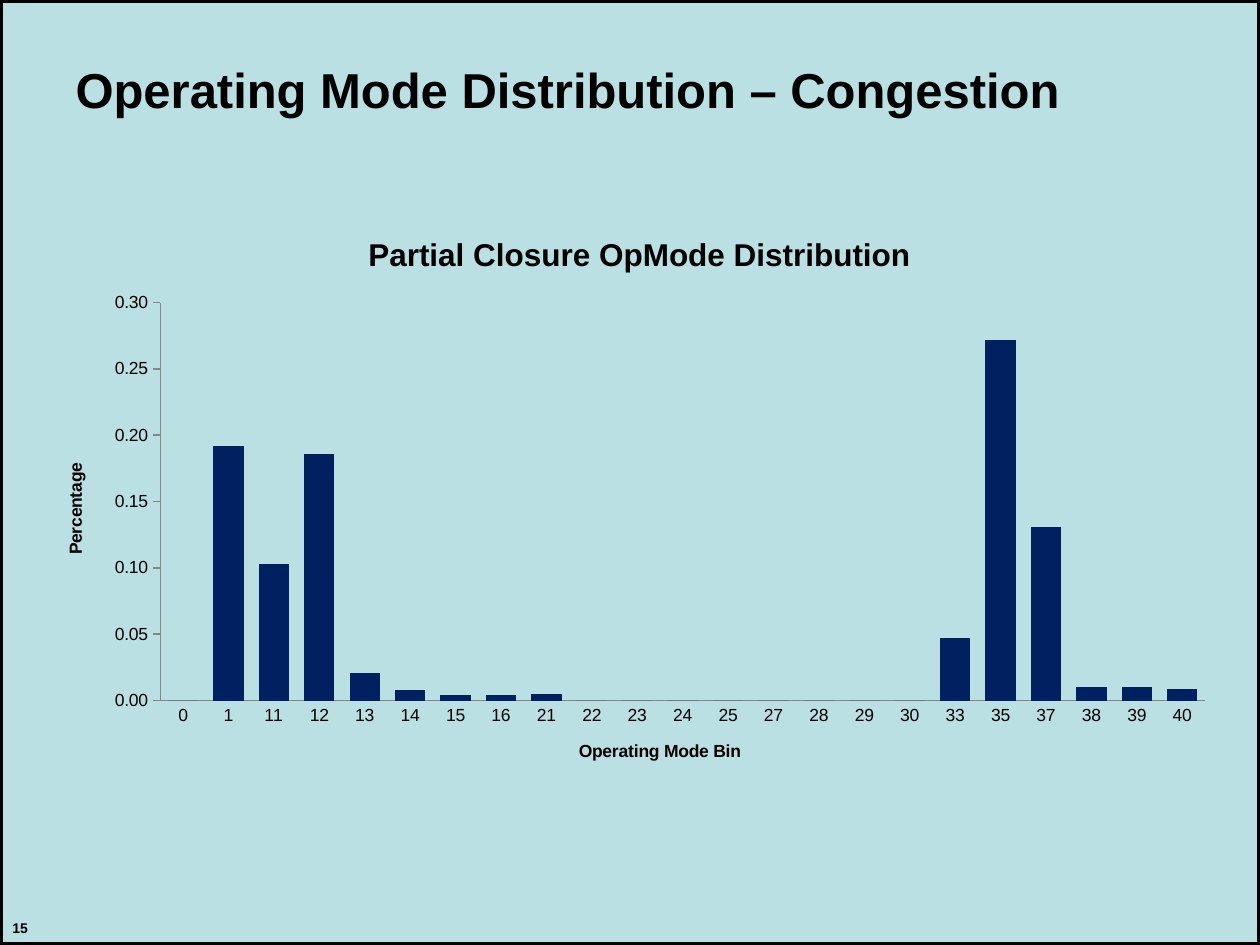
from lxml import etree
from pptx import Presentation
from pptx.chart.data import CategoryChartData
from pptx.dml.color import RGBColor
from pptx.enum.chart import XL_CHART_TYPE, XL_TICK_MARK
from pptx.enum.shapes import MSO_SHAPE
from pptx.enum.text import MSO_ANCHOR, PP_ALIGN
from pptx.oxml.ns import qn
from pptx.util import Cm, Pt

COLUMNS = XL_CHART_TYPE.COLUMN_CLUSTERED
TICK_NONE, TICK_OUT = XL_TICK_MARK.NONE, XL_TICK_MARK.OUTSIDE
RECTANGLE = MSO_SHAPE.RECTANGLE
TOP, LEFT = MSO_ANCHOR.TOP, PP_ALIGN.LEFT
BLACK = RGBColor(0x00, 0x00, 0x00)
PALE_TEAL = RGBColor(0xBB, 0xE0, 0xE3)
NAVY = RGBColor(0x00, 0x20, 0x60)
GRAY = RGBColor(0x86, 0x86, 0x86)
FONT = "Arial"


def add_bold_text(tf, text, size):
    tf.word_wrap = True
    tf.vertical_anchor = TOP
    p = tf.paragraphs[0]
    p.alignment = LEFT
    r = p.add_run()
    r.text = text
    style_font(r.font, size, True)


def style_font(font, size, bold):
    font.name = FONT
    font.size = Pt(size)
    font.bold = bold
    font.color.rgb = BLACK


prs = Presentation()
prs.slide_width, prs.slide_height = Cm(25.4), Cm(19.05)
s = prs.slides.add_slide(prs.slide_layouts[5])

frame = s.shapes.add_shape(RECTANGLE, 0, 0, prs.slide_width, prs.slide_height)
frame.shadow.inherit = False
frame.fill.solid()
frame.fill.fore_color.rgb = PALE_TEAL
frame.line.color.rgb = BLACK
frame.line.width = Pt(3)
s.shapes._spTree.insert(2, frame._element)

title = s.shapes.title
title.left, title.top, title.width, title.height = Cm(1.27), Cm(1.07), Cm(23.06), Cm(2.74)
add_bold_text(title.text_frame, "Operating Mode Distribution – Congestion", 28)

number = s.shapes.add_textbox(0, Cm(18.42), Cm(11.63), Cm(0.84))
add_bold_text(number.text_frame, "15", 8)

shares = {
    0: 0, 1: 0.192, 11: 0.103, 12: 0.186, 13: 0.021, 14: 0.008, 15: 0.004,
    16: 0.004, 21: 0.005, 22: 0, 23: 0, 24: 0, 25: 0, 27: 0, 28: 0, 29: 0,
    30: 0, 33: 0.047, 35: 0.272, 37: 0.131, 38: 0.01, 39: 0.01, 40: 0.009,
}
data = CategoryChartData()
data.categories = [str(mode) for mode in shares]
data.add_series("Series 1", list(shares.values()))
chart = s.shapes.add_chart(COLUMNS, Cm(0.84), Cm(4.24), Cm(23.93), Cm(11.63), data).chart
style_font(chart.font, 10, False)
chart.has_legend = False

chart.has_title = True
chart.chart_title.include_in_layout = False
value_axis, category_axis = chart.value_axis, chart.category_axis
for holder, text, size in (
    (chart.chart_title, " Partial Closure OpMode Distribution", 18),
    (category_axis.axis_title, "Operating Mode Bin", 10),
    (value_axis.axis_title, "Percentage", 10),
):
    r = holder.text_frame.paragraphs[0].add_run()
    r.text = text
    style_font(r.font, size, True)

for axis, tick in ((category_axis, TICK_NONE), (value_axis, TICK_OUT)):
    axis.has_major_gridlines = False
    axis.major_tick_mark = tick
    axis.minor_tick_mark = TICK_NONE
    axis.format.line.color.rgb = GRAY
    axis.format.line.width = Pt(1)
value_axis.minimum_scale, value_axis.maximum_scale = 0, 0.3
value_axis.major_unit = 0.05
value_axis.tick_labels.number_format = "0.00"
value_axis.tick_labels.number_format_is_linked = False

plot = chart.plots[0]
plot.gap_width = 50
plot.vary_by_categories = False
bars = plot.series[0]
bars.invert_if_negative = False
bars.format.fill.solid()
bars.format.fill.fore_color.rgb = NAVY

plot_area = chart._chartSpace.chart.plotArea
for old in plot_area.findall(qn("c:layout")):
    plot_area.remove(old)
layout = etree.Element(qn("c:layout"))
manual = etree.SubElement(layout, qn("c:manualLayout"))
for tag, value in (
    ("layoutTarget", "inner"), ("xMode", "edge"), ("yMode", "edge"),
    ("x", "0.1"), ("y", "0.16"), ("w", "0.88"), ("h", "0.69"),
):
    etree.SubElement(manual, qn("c:" + tag)).set("val", value)
plot_area.insert(0, layout)

prs.save("out.pptx")
